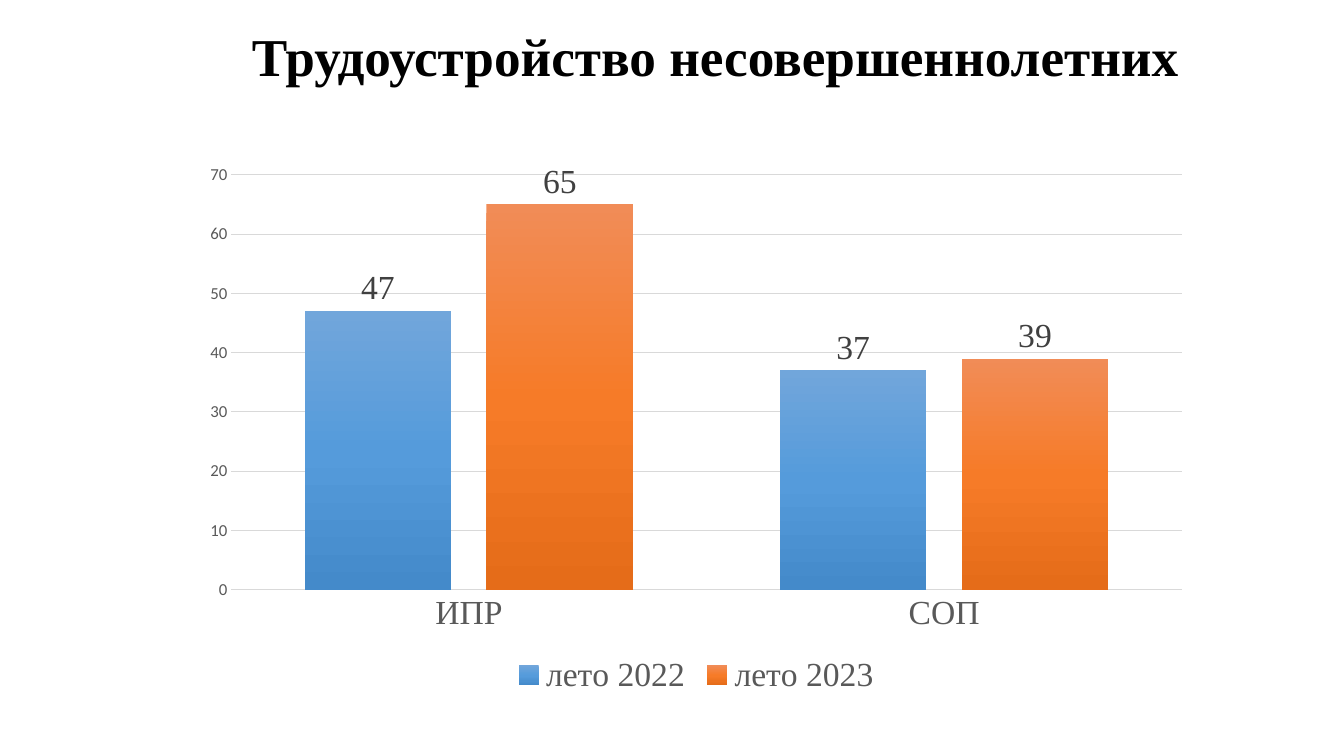
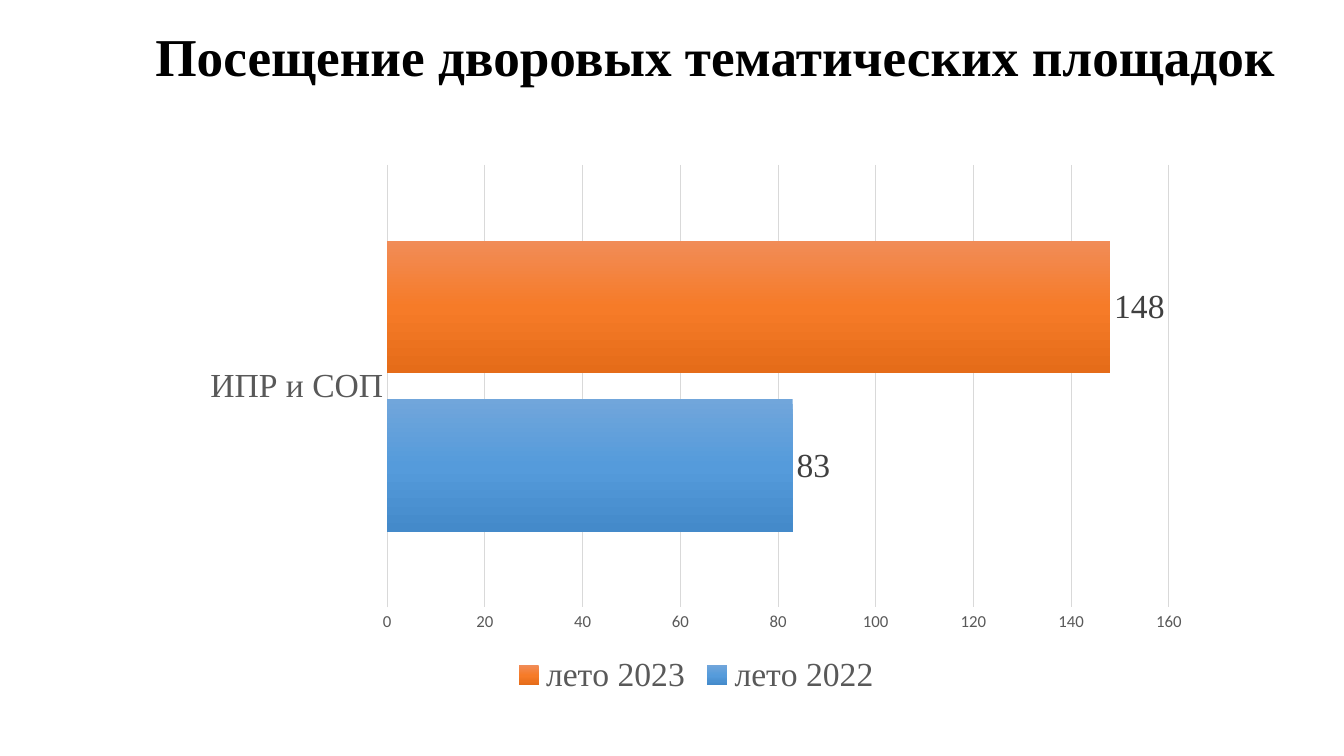
import copy

import pptx
import pptx.chart.data
import pptx.dml.color
import pptx.enum.chart
import pptx.enum.text
import pptx.oxml.ns
import pptx.util

EMU_PER_PX = 914400 / 100.8
SERIF, SANS = "Times New Roman", "Calibri"
BLACK, LABEL, AXIS, GRID = "000000", "404040", "595959", "D9D9D9"
GRADIENTS = {
    "лето 2022": ("71A6DB", "559BDB", "448ACA"),
    "лето 2023": ("F18C57", "F67B28", "E56C19"),
}
CHART_TYPE = pptx.enum.chart.XL_CHART_TYPE


def px(n):
    return pptx.util.Emu(round(n * EMU_PER_PX))


def rgb(value):
    return pptx.dml.color.RGBColor.from_string(value)


def set_font(font, size, color, name=SERIF, bold=False):
    font.size = pptx.util.Pt(size)
    font.color.rgb = rgb(color)
    font.name = name
    font.bold = bold


def add_text(p, text, **style):
    r = p.add_run()
    r.text = text
    set_font(r.font, **style)


class Deck:
    """Hold the presentation, the shared style and the current slide."""

    def __init__(self):
        self.prs = pptx.Presentation()
        self.prs.slide_width, self.prs.slide_height = px(1344), px(756)
        self.s = None

    def slide(self, title):
        self.s = self.prs.slides.add_slide(self.prs.slide_layouts[6])
        sp = self.s.shapes.add_textbox(px(103), px(18), px(1225), px(75))
        tf = sp.text_frame
        tf.word_wrap = True
        tf.auto_size = pptx.enum.text.MSO_AUTO_SIZE.SHAPE_TO_FIT_TEXT
        p = tf.paragraphs[0]
        p.alignment = pptx.enum.text.PP_ALIGN.CENTER
        add_text(p, title, size=38, color=BLACK, bold=True)

    def chart(self, kind, categories, values, gap, overlap):
        data = pptx.chart.data.CategoryChartData()
        data.categories = categories
        for name, series_values in zip(GRADIENTS, values):
            data.add_series(name, series_values)
        chart = self.s.shapes.add_chart(
            kind, px(190), px(154), px(1012), px(547), data).chart
        set_font(chart.font, 10, BLACK, SANS)
        chart.has_title = False
        self.legend(chart)
        self.axes(chart)
        plot = chart.plots[0]
        plot.gap_width, plot.overlap = gap, overlap
        plot.vary_by_categories = False
        for series in plot.series:
            self.series(series)

    def legend(self, chart):
        chart.has_legend = True
        chart.legend.position = pptx.enum.chart.XL_LEGEND_POSITION.BOTTOM
        chart.legend.include_in_layout = False
        set_font(chart.legend.font, 24, AXIS)

    def axes(self, chart):
        for axis in (chart.category_axis, chart.value_axis):
            axis.major_tick_mark = pptx.enum.chart.XL_TICK_MARK.NONE
            axis.minor_tick_mark = pptx.enum.chart.XL_TICK_MARK.NONE
        category, value = chart.category_axis, chart.value_axis
        set_font(category.tick_labels.font, 24, AXIS)
        set_font(value.tick_labels.font, 12, AXIS, SANS)
        value.format.line.fill.background()
        value.has_major_gridlines = True
        for line, width in ((category.format.line, 1),
                            (value.major_gridlines.format.line, 0.75)):
            line.color.rgb = rgb(GRID)
            line.width = pptx.util.Pt(width)

    def series(self, series):
        series.invert_if_negative = False
        fill = series.format.fill
        fill.gradient()
        fill.gradient_angle = 270
        stops = next(series._element.iter(pptx.oxml.ns.qn("a:gsLst")))
        stops.insert(1, copy.deepcopy(stops[0]))
        colors = GRADIENTS[series.name]
        for stop, position, color in zip(fill.gradient_stops, (0, 0.5, 1), colors):
            stop.position = position
            stop.color.rgb = rgb(color)
        labels = series.data_labels
        labels.show_value = True
        labels.position = pptx.enum.chart.XL_LABEL_POSITION.OUTSIDE_END
        set_font(labels.font, 24, LABEL)


def main():
    deck = Deck()
    deck.slide("Трудоустройство несовершеннолетних")
    deck.chart(CHART_TYPE.COLUMN_CLUSTERED, ["ИПР", "СОП"],
               [(47, 37), (65, 39)], gap=100, overlap=-24)
    deck.slide("Посещение дворовых тематических площадок")
    deck.chart(CHART_TYPE.BAR_CLUSTERED, ["ИПР и СОП"],
               [(83,), (148,)], gap=115, overlap=-20)
    deck.prs.save("out.pptx")


if __name__ == "__main__":
    main()
